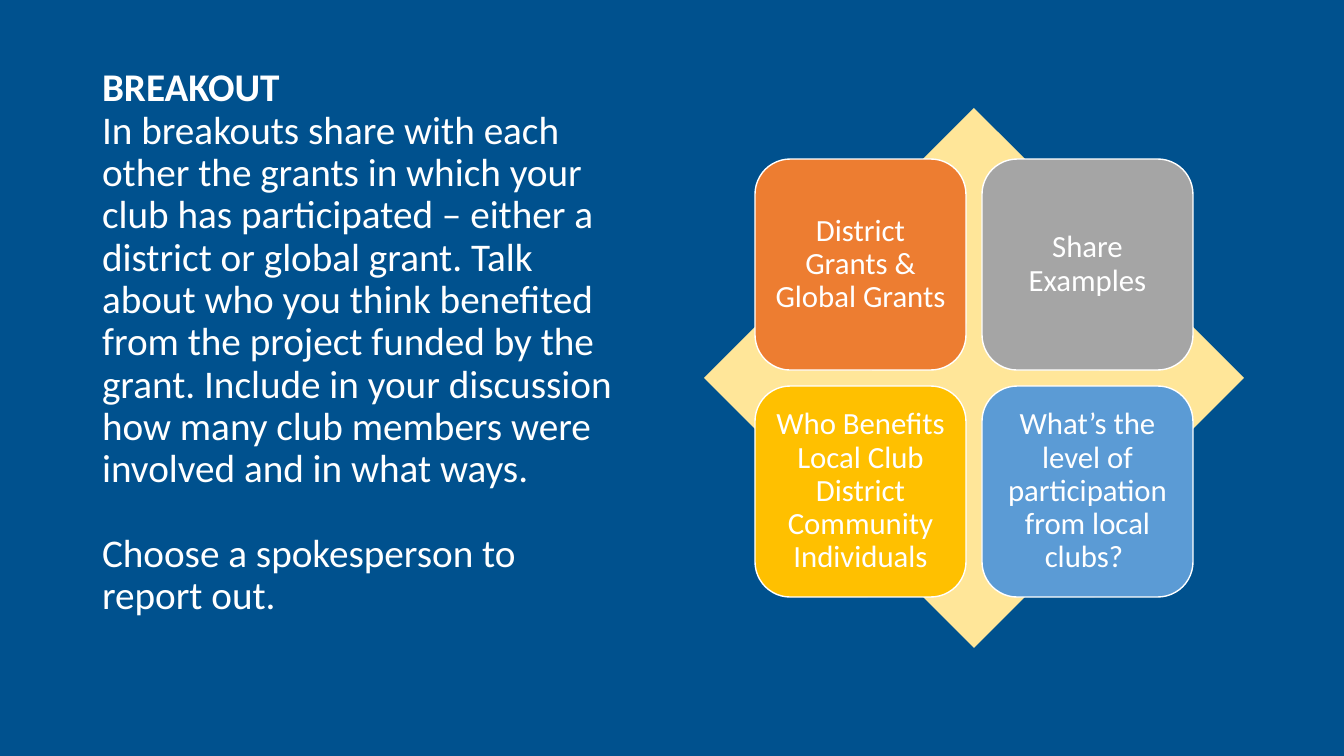
from pptx import Presentation
from pptx.dml.color import RGBColor
from pptx.enum.shapes import MSO_SHAPE
from pptx.enum.text import MSO_ANCHOR, MSO_AUTO_SIZE, PP_ALIGN
from pptx.util import Inches, Pt

# Content
HEADING = "BREAKOUT"
INSTRUCTIONS = (
    "In breakouts share with each other the grants in which your club has "
    "participated – either a district or global grant. Talk about who you "
    "think benefited from the project funded by the grant. Include in your "
    "discussion how many club members were involved and in what ways."
)
CLOSING = "Choose a spokesperson to report out."
TILES = [
    ("District Grants & Global Grants", "ED7D31"),
    ("Share Examples", "A5A5A5"),
    ("Who Benefits Local Club District Community Individuals", "FFC000"),
    ("What’s the level of participation from local clubs? ", "5B9BD5"),
]
FONT = "Calibri"
WHITE = "FFFFFF"

# Layout in px
DIAMOND_LEFT, DIAMOND_TOP, DIAMOND_SIZE = 704, 108, 540
TILE_SIZE, TILE_GAP, TILE_INSET = 211, 16, 19
TILE_MARGIN = (DIAMOND_SIZE - 2 * TILE_SIZE - TILE_GAP) // 2


def px(length):
    return Inches(length / 100.8)


def color(hex_string):
    return RGBColor.from_string(hex_string)


def format_paragraph(paragraph, size, bold=False):
    paragraph.line_spacing = 0.9
    for run in paragraph.runs:
        run.font.name = FONT
        run.font.size = Pt(size)
        run.font.bold = bold
        run.font.color.rgb = color(WHITE)


def add_block(slide, kind, left, top, size, fill):
    shape = slide.shapes.add_shape(kind, px(left), px(top), px(size), px(size))
    shape.shadow.inherit = False
    shape.fill.solid()
    shape.fill.fore_color.rgb = color(fill)
    return shape


def add_title(slide):
    title = slide.shapes.title
    title.left, title.top, title.width, title.height = map(px, (92, 188, 532, 477))
    text_frame = title.text_frame
    text_frame.word_wrap = True
    text_frame.auto_size = MSO_AUTO_SIZE.NONE
    text_frame.vertical_anchor = MSO_ANCHOR.BOTTOM
    text_frame.margin_bottom = px(47)
    text_frame.text = "\n".join([HEADING, INSTRUCTIONS, CLOSING])
    for index, paragraph in enumerate(text_frame.paragraphs):
        paragraph.alignment = PP_ALIGN.LEFT
        paragraph.space_before = Pt(0)
        format_paragraph(paragraph, 28, bold=index == 0)
    text_frame.paragraphs[-1].space_before = Pt(30)


def add_tile(slide, index, text, fill):
    row, column = divmod(index, 2)
    pitch = TILE_SIZE + TILE_GAP
    tile = add_block(
        slide, MSO_SHAPE.ROUNDED_RECTANGLE,
        DIAMOND_LEFT + TILE_MARGIN + column * pitch,
        DIAMOND_TOP + TILE_MARGIN + row * pitch,
        TILE_SIZE, fill,
    )
    tile.line.color.rgb = color(WHITE)
    tile.line.width = Pt(1)
    text_frame = tile.text_frame
    text_frame.word_wrap = True
    text_frame.vertical_anchor = MSO_ANCHOR.MIDDLE
    # The rounded corners already inset the text by about 10 px
    text_frame.margin_left = text_frame.margin_right = px(TILE_INSET - 10)
    text_frame.margin_top = text_frame.margin_bottom = px(TILE_INSET - 10)
    text_frame.text = text
    paragraph = text_frame.paragraphs[0]
    paragraph.alignment = PP_ALIGN.CENTER
    format_paragraph(paragraph, 22)


def main():
    presentation = Presentation()
    presentation.slide_width = px(1344)
    presentation.slide_height = px(756)
    slide = presentation.slides.add_slide(presentation.slide_layouts[5])
    slide.background.fill.solid()
    slide.background.fill.fore_color.rgb = color("00518E")

    # Instructions on the left
    add_title(slide)

    # Diamond with four tiles on the right
    diamond = add_block(slide, MSO_SHAPE.DIAMOND, DIAMOND_LEFT, DIAMOND_TOP,
                        DIAMOND_SIZE, "FFE699")
    diamond.line.fill.background()
    for index, (text, fill) in enumerate(TILES):
        add_tile(slide, index, text, fill)

    presentation.save("out.pptx")


if __name__ == "__main__":
    main()
